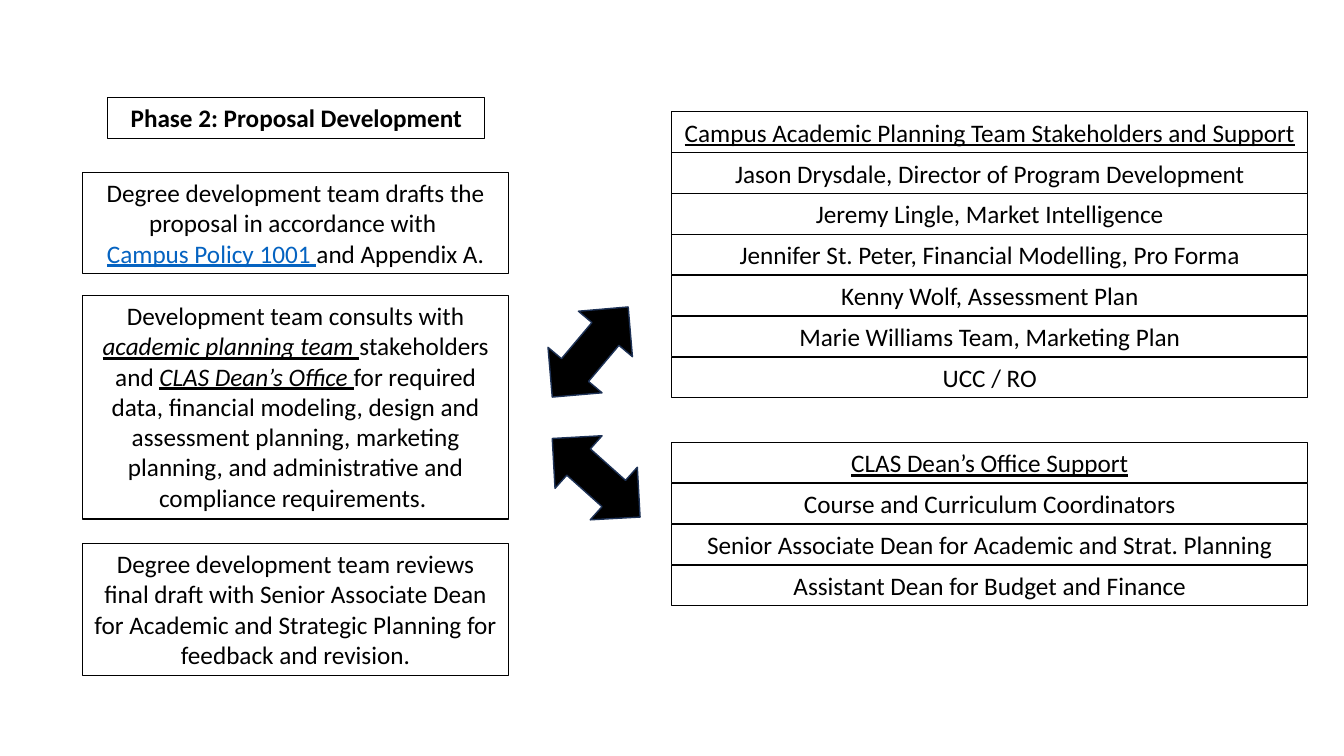
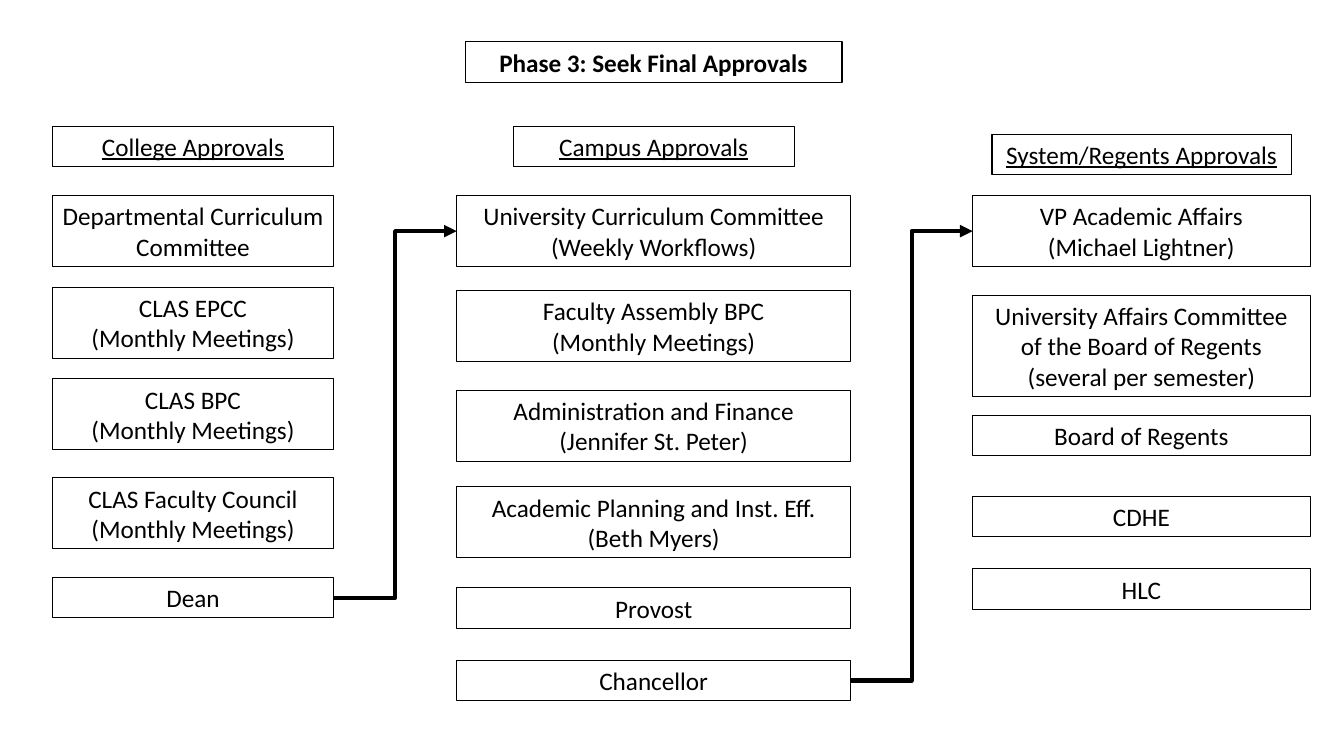
from dataclasses import dataclass, field
from typing import Any

from lxml.etree import SubElement
from pptx import Presentation
from pptx.dml.color import RGBColor
from pptx.enum.shapes import MSO_CONNECTOR, MSO_SHAPE
from pptx.enum.text import MSO_ANCHOR, MSO_AUTO_SIZE, PP_ALIGN
from pptx.oxml.ns import qn
from pptx.util import Cm, Pt

BLACK = "000000"
LINK_BLUE = "0563C1"
ARROW_EDGE = "1E3256"
LINE_HEIGHT = 0.77
BOX_PADDING = 0.25
ROW_PITCH = 1.03
TITLE_WIDTH = 9.5

BODY_FONT = {"name": "Calibri", "size": Pt(18), "bold": False, "italic": False, "underline": False}
TITLE_FONT = {"bold": True}
HEADING_FONT = {"underline": True}
TERM_FONT = {"italic": True, "underline": True}
FRAME_FORMAT = {
    "word_wrap": True,
    "auto_size": MSO_AUTO_SIZE.NONE,
    "vertical_anchor": MSO_ANCHOR.TOP,
    "margin_left": Cm(0.25),
    "margin_right": Cm(0.25),
    "margin_top": Cm(0.13),
    "margin_bottom": Cm(0.13),
}
PARAGRAPH_FORMAT = {"alignment": PP_ALIGN.CENTER, "line_spacing": 1.0, "space_before": Pt(0)}


@dataclass
class Span:
    text: str
    font: dict[str, Any] = field(default_factory=dict)
    color: str = BLACK


@dataclass
class Card:
    left: float
    top: float
    width: float
    lines: int
    paras: list[list[Span]]


@dataclass
class Column:
    left: float
    width: float
    heading: Card
    steps: list[tuple[float, str]]


@dataclass
class DoubleArrow:
    left: float
    top: float
    rotation: float


def plain(text: str, **font: Any) -> list[list[Span]]:
    return [[Span(line, font)] for line in text.split("\n")]


def text_card(left: float, top: float, width: float, text: str, lines: int = 0, **font: Any) -> Card:
    paras = plain(text, **font)
    return Card(left, top, width, lines or len(paras), paras)


PROPOSAL_STEPS = [
    Card(2.08, 4.34, 10.74, 3, [
        [Span("Degree development team drafts the proposal in accordance with ")],
        [Span("Campus Policy 1001 ", HEADING_FONT, LINK_BLUE), Span("and Appendix A.")],
    ]),
    Card(2.08, 7.44, 10.74, 7, [[
        Span("Development team consults with "),
        Span("academic planning team ", TERM_FONT),
        Span("stakeholders and "),
        Span("CLAS Dean’s Office ", TERM_FONT),
        Span("for required data, financial modeling, design and assessment planning, "
             "marketing planning, and administrative and compliance requirements. "),
    ]]),
    Card(2.08, 13.69, 10.74, 4, plain(
        "Degree development team reviews final draft with Senior Associate Dean "
        "for Academic and Strategic Planning for feedback and revision.")),
]
SUPPORT_LISTS = [
    (2.82, [
        "Campus Academic Planning Team Stakeholders and Support",
        "Jason Drysdale, Director of Program Development",
        "Jeremy Lingle, Market Intelligence",
        "Jennifer St. Peter, Financial Modelling, Pro Forma",
        "Kenny Wolf, Assessment Plan",
        "Marie Williams Team, Marketing Plan",
        "UCC / RO",
    ]),
    (11.15, [
        "CLAS Dean’s Office Support",
        "Course and Curriculum Coordinators",
        "Senior Associate Dean for Academic and Strat. Planning",
        "Assistant Dean for Budget and Finance",
    ]),
]
SUPPORT_ARROWS = [DoubleArrow(13.39, 7.98, 310.1), DoubleArrow(13.54, 11.15, 41.8)]

DEPARTMENT_STEP = "Departmental Curriculum Committee"
WRAPPED_LINES = {DEPARTMENT_STEP: 2}
APPROVAL_COLUMNS = [
    Column(1.32, 7.09, text_card(1.32, 3.18, 7.09, "College Approvals", **HEADING_FONT), [
        (4.93, DEPARTMENT_STEP),
        (7.24, "CLAS EPCC\n(Monthly Meetings)"),
        (9.55, "CLAS BPC\n(Monthly Meetings)"),
        (12.04, "CLAS Faculty Council\n(Monthly Meetings)"),
        (14.55, "Dean"),
    ]),
    Column(11.51, 9.93, text_card(12.93, 3.18, 7.09, "Campus Approvals", **HEADING_FONT), [
        (4.93, "University Curriculum Committee\n(Weekly Workflows)"),
        (7.32, "Faculty Assembly BPC\n(Monthly Meetings)"),
        (9.83, "Administration and Finance\n(Jennifer St. Peter)"),
        (12.27, "Academic Planning and Inst. Eff.\n(Beth Myers)"),
        (14.81, "Provost"),
        (16.64, "Chancellor"),
    ]),
    Column(24.51, 8.51, text_card(25, 3.38, 7.54, "System/Regents Approvals", **HEADING_FONT), [
        (4.93, "VP Academic Affairs\n(Michael Lightner)"),
        (7.44, "University Affairs Committee\nof the Board of Regents\n(several per semester)"),
        (10.46, "Board of Regents"),
        (12.5, "CDHE"),
        (14.33, "HLC"),
    ]),
]


def apply(target: Any, values: dict[str, Any]) -> None:
    for name, value in values.items():
        setattr(target, name, value)


def rgb(color: str) -> RGBColor:
    return RGBColor.from_string(color)


def set_line(shape: Any, color: str, points: float) -> None:
    shape.line.color.rgb = rgb(color)
    shape.line.width = Pt(points)


def format_card(box: Any, card: Card) -> None:
    apply(box, {
        "left": Cm(card.left),
        "top": Cm(card.top),
        "width": Cm(card.width),
        "height": Cm(card.lines * LINE_HEIGHT + BOX_PADDING),
    })
    set_line(box, BLACK, 0.75)
    frame = box.text_frame
    apply(frame, FRAME_FORMAT)
    for index, spans in enumerate(card.paras):
        para = frame.add_paragraph() if index else frame.paragraphs[0]
        apply(para, PARAGRAPH_FORMAT)
        for span in spans:
            run = para.add_run()
            run.text = span.text
            apply(run.font, BODY_FONT | span.font)
            run.font.color.rgb = rgb(span.color)


def add_card(page: Any, card: Card) -> Any:
    box = page.shapes.add_textbox(0, 0, 0, 0)
    format_card(box, card)
    return box


def add_page(deck: Any, left: float, top: float, title: str) -> Any:
    page = deck.slides.add_slide(deck.slide_layouts[5])
    format_card(page.shapes.title, text_card(left, top, TITLE_WIDTH, title, **TITLE_FONT))
    return page


def add_double_arrow(page: Any, arrow: DoubleArrow) -> None:
    shape = page.shapes.add_shape(
        MSO_SHAPE.LEFT_RIGHT_ARROW, Cm(arrow.left), Cm(arrow.top), Cm(2.97), Cm(1.78))
    shape.rotation = arrow.rotation
    shape.shadow.inherit = False
    shape.fill.solid()
    shape.fill.fore_color.rgb = rgb(BLACK)
    set_line(shape, ARROW_EDGE, 1)


def add_elbow(page: Any, start: Any, end: Any) -> None:
    connector = page.shapes.add_connector(
        MSO_CONNECTOR.ELBOW,
        start.left + start.width, start.top + start.height // 2,
        end.left, end.top + end.height // 2)
    connector.begin_connect(start, 3)
    connector.end_connect(end, 1)
    set_line(connector, BLACK, 3)
    properties = connector.element.spPr
    SubElement(properties.find(qn("a:ln")), qn("a:tailEnd"), type="triangle")
    SubElement(properties, qn("a:effectLst"))


def build_proposal(deck: Any) -> None:
    page = add_page(deck, 2.72, 2.46, "Phase 2: Proposal Development")
    for card in PROPOSAL_STEPS:
        add_card(page, card)
    for top, rows in SUPPORT_LISTS:
        for index, text in enumerate(rows):
            font = {} if index else HEADING_FONT
            add_card(page, text_card(16.93, top + index * ROW_PITCH, 16.03, text, **font))
    for arrow in SUPPORT_ARROWS:
        add_double_arrow(page, arrow)


def build_approvals(deck: Any) -> None:
    page = add_page(deck, 11.72, 1.05, "Phase 3: Seek Final Approvals")
    columns = []
    for column in APPROVAL_COLUMNS:
        add_card(page, column.heading)
        columns.append([
            add_card(page, text_card(column.left, top, column.width, text, WRAPPED_LINES.get(text, 0)))
            for top, text in column.steps
        ])
    for current, following in zip(columns, columns[1:]):
        add_elbow(page, current[-1], following[0])


def main() -> None:
    deck = Presentation()
    apply(deck, {"slide_width": Cm(33.87), "slide_height": Cm(19.05)})
    build_proposal(deck)
    build_approvals(deck)
    deck.save("out.pptx")


if __name__ == "__main__":
    main()
